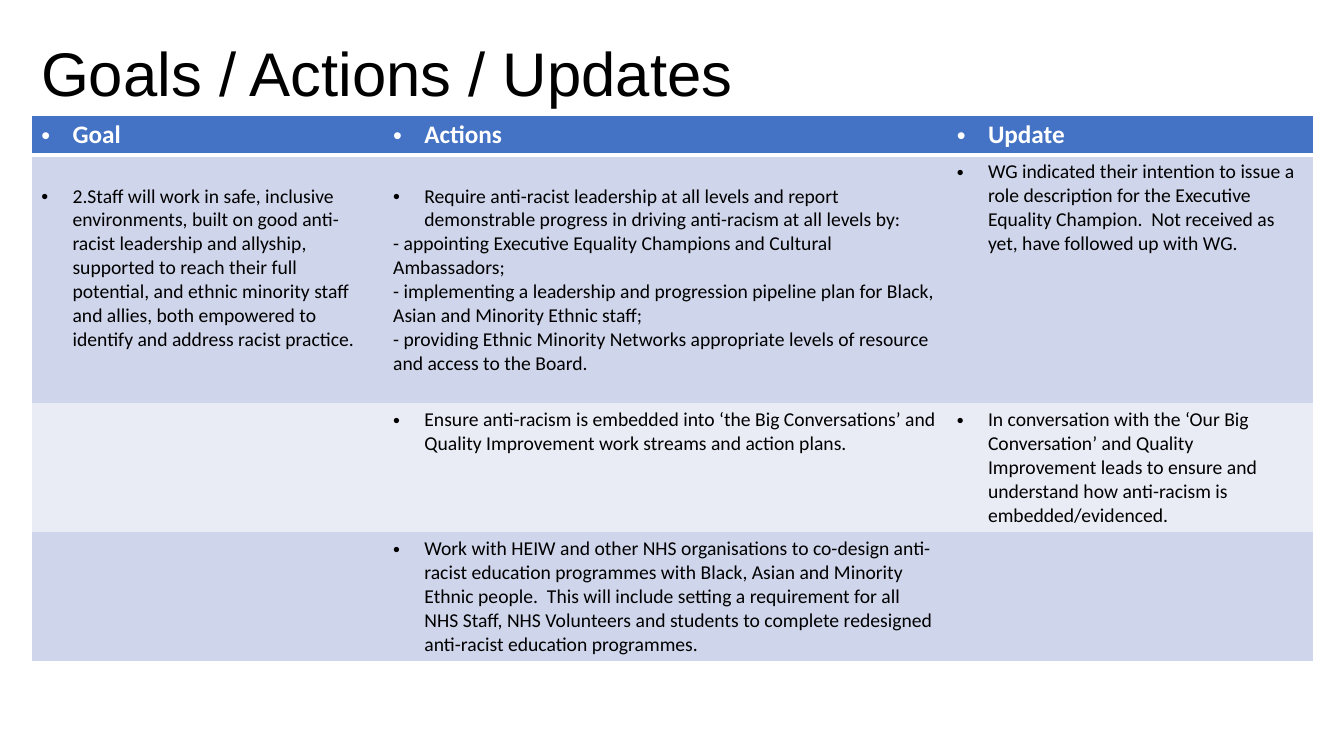
from dataclasses import dataclass

from lxml.etree import SubElement
from pptx import Presentation
from pptx.dml.color import RGBColor
from pptx.enum.text import MSO_ANCHOR
from pptx.oxml.ns import qn
from pptx.util import Inches, Pt


@dataclass(frozen=True)
class Theme:
    title_font: str = "Arial"
    body_font: str = "Calibri"
    title_size: int = 44
    header_size: int = 18
    body_size: int = 14
    text: str = "000000"
    white: str = "FFFFFF"
    header_fill: str = "4472C4"
    bands: tuple = ("CFD5EA", "E9EBF5")


COLUMN_WIDTHS = [3.49, 5.59, 3.64]
ROW_HEIGHTS = [0.4, 2.46, 1.28, 1.28]
BULLET_INDENT = Inches(0.31)
LOWERED_TOP = 0.29
LOWERED_CELLS = {(1, 0), (1, 1)}

HEADINGS = ["Goal", "Actions", "Update"]
GOAL = (
    "2.Staff will work in safe, inclusive environments, built on good anti-racist "
    "leadership and allyship, supported to reach their full potential, and ethnic "
    "minority staff and allies, both empowered to identify and address racist practice."
)
LEADERSHIP_ACTIONS = [
    "Require anti-racist leadership at all levels and report demonstrable progress "
    "in driving anti-racism at all levels by:",
    "- appointing Executive Equality Champions and Cultural Ambassadors;",
    "- implementing a leadership and progression pipeline plan for Black, Asian and "
    "Minority Ethnic staff;",
    "- providing Ethnic Minority Networks appropriate levels of resource and access "
    "to the Board.",
]
CHAMPION_UPDATE = (
    "WG indicated their intention to issue a role description for the Executive "
    "Equality Champion.  Not received as yet, have followed up with WG."
)
CONVERSATION_ACTION = (
    "Ensure anti-racism is embedded into ‘the Big Conversations’ and Quality "
    "Improvement work streams and action plans."
)
CONVERSATION_UPDATE = (
    "In conversation with the ‘Our Big Conversation’ and Quality Improvement leads "
    "to ensure and understand how anti-racism is embedded/evidenced."
)
EDUCATION_ACTION = (
    "Work with HEIW and other NHS organisations to co-design anti-racist education "
    "programmes with Black, Asian and Minority Ethnic people.  This will include "
    "setting a requirement for all NHS Staff, NHS Volunteers and students to complete "
    "redesigned anti-racist education programmes."
)
ROWS = [
    [[heading] for heading in HEADINGS],
    [[GOAL], LEADERSHIP_ACTIONS, [CHAMPION_UPDATE]],
    [[], [CONVERSATION_ACTION], [CONVERSATION_UPDATE]],
    [[], [EDUCATION_ACTION], []],
]


def write_paragraph(para, text, *, font, size, color, bold=False, bullet=False, spacing=None):
    if bullet:
        properties = para._p.get_or_add_pPr()
        properties.set("marL", str(BULLET_INDENT))
        properties.set("indent", str(-BULLET_INDENT))
        SubElement(properties, qn("a:buFont"), typeface="Arial")
        SubElement(properties, qn("a:buChar"), char="•")
    if spacing:
        para.line_spacing = spacing
    span = para.add_run()
    span.text = text
    span.font.name = font
    span.font.size = Pt(size)
    span.font.bold = bold
    span.font.color.rgb = RGBColor.from_string(color)


def set_borders(cell, widths, color):
    """Draw the sides given in points by widths, and clear the other sides."""
    properties = cell._tc.get_or_add_tcPr()
    for side in "LRTB":
        width = widths.get(side, 0)
        line = SubElement(properties, qn(f"a:ln{side}"), w=str(Pt(width)))
        if width:
            fill = SubElement(line, qn("a:solidFill"))
            SubElement(fill, qn("a:srgbClr"), val=color)
        else:
            SubElement(line, qn("a:noFill"))


class SlideBuilder:
    def __init__(self, page, theme):
        self.page = page
        self.theme = theme

    def add_title(self, text, left, top, width, height):
        box = self.page.shapes.add_textbox(
            Inches(left), Inches(top), Inches(width), Inches(height)
        )
        frame = box.text_frame
        frame.word_wrap = True
        frame.vertical_anchor = MSO_ANCHOR.MIDDLE
        write_paragraph(
            frame.paragraphs[0], text, font=self.theme.title_font,
            size=self.theme.title_size, color=self.theme.text, spacing=0.9,
        )

    def add_goals_table(self, rows, left, top):
        table = self.page.shapes.add_table(
            len(rows), len(COLUMN_WIDTHS), Inches(left), Inches(top),
            Inches(sum(COLUMN_WIDTHS)), Inches(sum(ROW_HEIGHTS)),
        ).table
        for column, width in zip(table.columns, COLUMN_WIDTHS):
            column.width = Inches(width)
        for row, height in zip(table.rows, ROW_HEIGHTS):
            row.height = Inches(height)
        for row_index, row in enumerate(rows):
            for column_index, texts in enumerate(row):
                self.fill_cell(table, row_index, column_index, texts)

    def fill_cell(self, table, row, column, texts):
        theme = self.theme
        cell = table.cell(row, column)
        header = row == 0
        borders = {
            "L": int(column == 0),
            "R": int(column == len(COLUMN_WIDTHS) - 1),
            "T": {0: 1, 1: 3}.get(row, 0),
            "B": {0: 3, len(ROW_HEIGHTS) - 1: 1}.get(row, 0),
        }
        set_borders(cell, borders, theme.white)
        cell.fill.solid()
        fill_color = theme.header_fill if header else theme.bands[(row - 1) % 2]
        cell.fill.fore_color.rgb = RGBColor.from_string(fill_color)
        if (row, column) in LOWERED_CELLS:
            cell.margin_top = Inches(LOWERED_TOP)
        frame = cell.text_frame
        for index, text in enumerate(texts):
            para = frame.add_paragraph() if index else frame.paragraphs[0]
            write_paragraph(
                para, text, font=theme.body_font,
                size=theme.header_size if header else theme.body_size,
                color=theme.white if header else theme.text,
                bold=header, bullet=index == 0,
            )


def main():
    deck = Presentation()
    deck.slide_width = Inches(13.33)
    deck.slide_height = Inches(7.5)
    page = deck.slides.add_slide(deck.slide_layouts[6])
    builder = SlideBuilder(page, Theme())
    builder.add_title("Goals / Actions / Updates", 0.31, 0.03, 11.5, 1.45)
    builder.add_goals_table(ROWS, 0.31, 1.14)
    deck.save("out.pptx")


if __name__ == "__main__":
    main()
